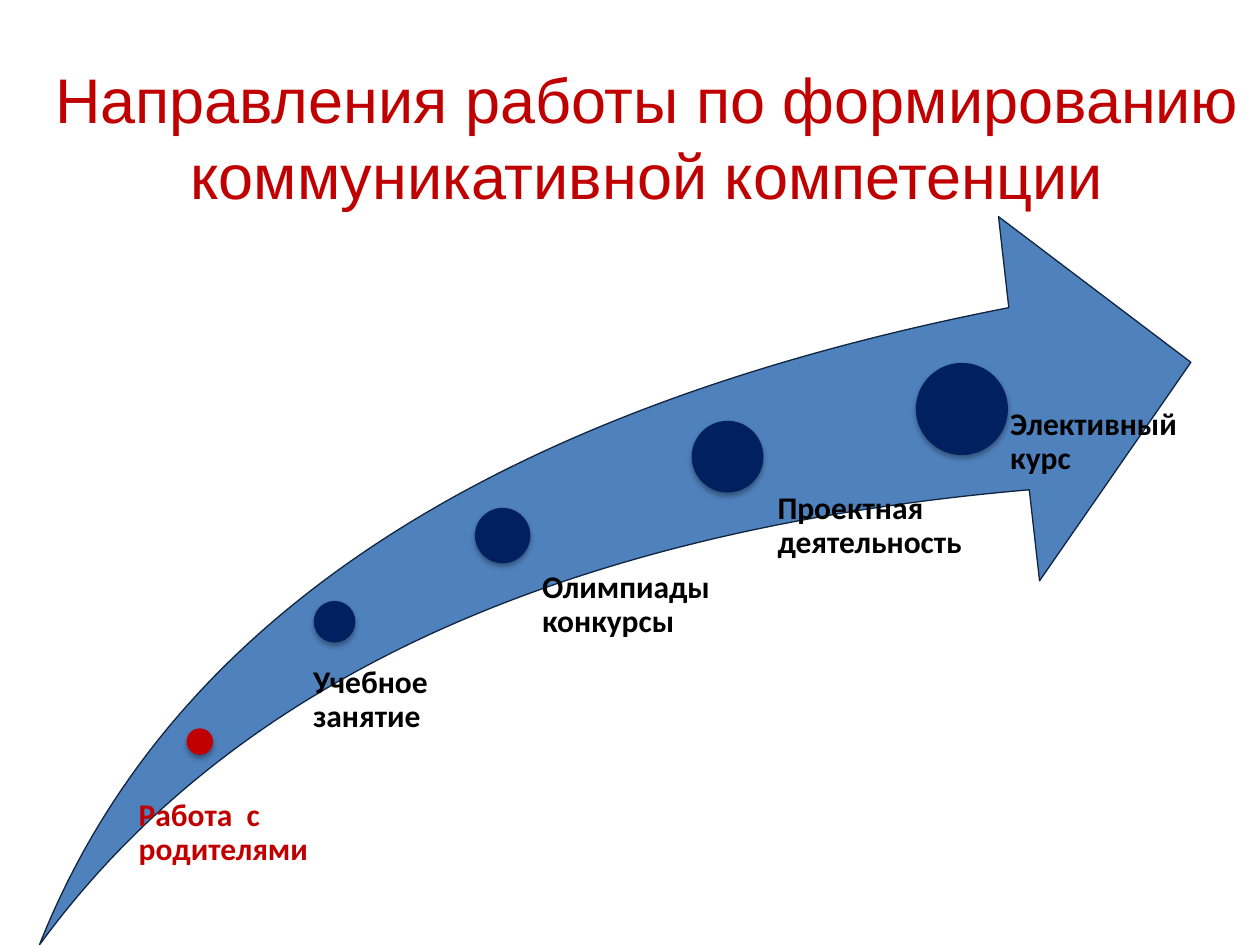
import pptx
import pptx.util
import pptx.dml.color
import pptx.enum.shapes
import pptx.enum.text
import pptx.oxml
import pptx.oxml.ns

Pt = pptx.util.Pt
COLORS = {"red": "C00000", "navy": "002060", "blue": "4F81BD", "outline": "0F243E", "black": "000000"}
SHADOW = (
    f'<a:effectLst {pptx.oxml.ns.nsdecls("a")}>'
    '<a:outerShdw blurRad="39400" dist="22900" dir="5400000" rotWithShape="0">'
    f'<a:srgbClr val="{COLORS["black"]}"><a:alpha val="35000"/></a:srgbClr>'
    '</a:outerShdw></a:effectLst>'
)


def color(name):
    return pptx.dml.color.RGBColor.from_string(COLORS[name])


def add_span(para, text, font, size, color_name, bold=False):
    span = para.add_run()
    span.text = text
    span.font.name = font
    span.font.size = Pt(size)
    span.font.bold = bold
    span.font.color.rgb = color(color_name)


deck = pptx.Presentation()
deck.slide_width, deck.slide_height = Pt(720), Pt(540)
page = deck.slides.add_slide(deck.slide_layouts[6])

title = page.shapes.add_textbox(Pt(19.5), Pt(21.6), Pt(700.5), Pt(112.3))
title.text_frame.word_wrap = True
title.text_frame.vertical_anchor = pptx.enum.text.MSO_ANCHOR.MIDDLE
para = title.text_frame.paragraphs[0]
para.alignment = pptx.enum.text.PP_ALIGN.CENTER
add_span(para, "Направления работы по формированию коммуникативной компетенции", "Arial", 36, "red")

arrow = page.shapes.add_shape(
    pptx.enum.shapes.MSO_SHAPE.SWOOSH_ARROW, Pt(22.5), Pt(123.8), Pt(658), Pt(416.2))
arrow.adjustments[0] = 0.25
arrow.adjustments[1] = 0.25
arrow.shadow.inherit = False
arrow.fill.solid()
arrow.fill.fore_color.rgb = color("blue")
arrow.line.color.rgb = color("outline")
arrow.line.width = Pt(0.75)

steps = [
    (["Работа  с родителями"], "red", "red", (106.6, 416.2, 15.1), (71.3, 456.5, 124.6, 67.7)),
    (["Учебное", "занятие"], "navy", "black", (179.3, 343.4, 23.8), (166.3, 380.9, 131.8, 144)),
    (["Олимпиады", "конкурсы"], "navy", "black", (271.4, 290.2, 31.7), (293, 326.2, 128.9, 58.3)),
    (["Проектная", "деятельность"], "navy", "black", (395.3, 240.5, 41), (422.6, 281.5, 133.2, 47.5)),
    (["Элективный курс"], "navy", "black", (523.4, 207.4, 52.6), (549.4, 233.3, 133.2, 306.7)),
]
for lines, marker_color, text_color, (left, top, diameter), label_area in steps:
    marker = page.shapes.add_shape(
        pptx.enum.shapes.MSO_SHAPE.OVAL, Pt(left), Pt(top), Pt(diameter), Pt(diameter))
    marker.fill.solid()
    marker.fill.fore_color.rgb = color(marker_color)
    marker.line.fill.background()
    marker.element.spPr.append(pptx.oxml.parse_xml(SHADOW))

    label = page.shapes.add_textbox(*map(Pt, label_area))
    frame = label.text_frame
    frame.word_wrap = True
    frame.margin_left = Pt(0.53 * diameter)
    frame.margin_top = frame.margin_right = frame.margin_bottom = 0
    for index, line in enumerate(lines):
        para = frame.add_paragraph() if index else frame.paragraphs[0]
        para.line_spacing = 0.9
        add_span(para, line, "Calibri", 18, text_color, bold=True)

deck.save("out.pptx")
